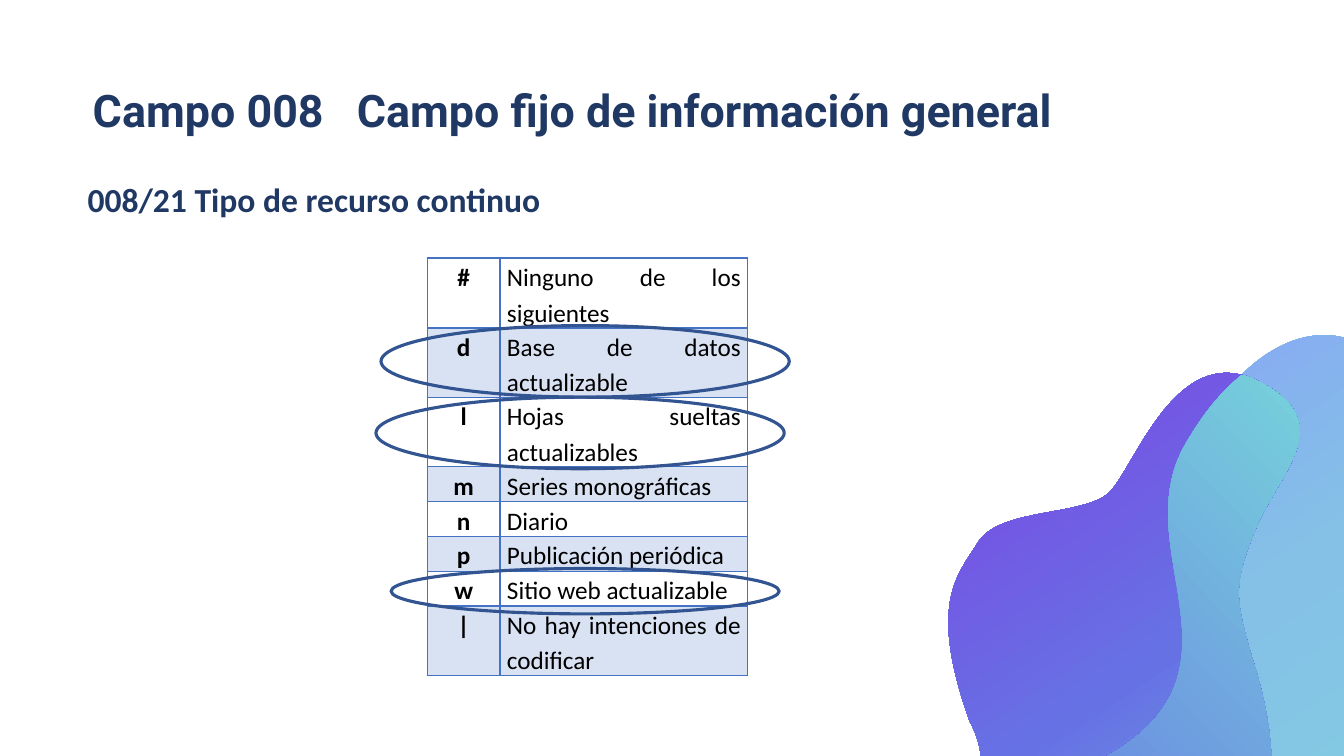
"""Build the slide on field 008/21, type of continuing resource."""
import math
from pptx import Presentation, util as u
from pptx.dml.color import RGBColor
from pptx.enum import shapes, text
from pptx.oxml import parse_xml
from pptx.oxml.ns import nsdecls

THEME = {
    "navy": RGBColor.from_string("203864"), "black": RGBColor.from_string("000000"),
    "ring": RGBColor.from_string("325491"), "table": "4472C4", "band_alpha": 20000,
    "title_font": "Roboto", "body_font": "Calibri",
    "title_size": u.Pt(32), "subtitle_size": u.Pt(24), "cell_size": u.Pt(18),
}
COLS, ROWS = 40 / 3, 7.5
TILT = 52.2


def span(*cells):
    """Turn grid columns or rows into lengths."""
    return [u.Inches(c) for c in cells]


def style(p, font, size, color, bold, align, spacing):
    """Format a whole paragraph."""
    p.font.name, p.font.size, p.font.bold = font, size, bold
    p.font.color.rgb = color
    p.alignment, p.line_spacing = align, spacing


prs = Presentation()
prs.slide_width, prs.slide_height = span(COLS, ROWS)
s = prs.slides.add_slide(prs.slide_layouts[5])

title = s.shapes.title
title.left, title.top, title.width, title.height = span(0.92, 0.4, 11.5, 1.45)
tf = title.text_frame
tf.margin_left = tf.margin_top = tf.margin_right = tf.margin_bottom = 0
tf.vertical_anchor, tf.word_wrap = text.MSO_ANCHOR.MIDDLE, True
tf.auto_size = text.MSO_AUTO_SIZE.NONE
p = tf.paragraphs[0]
p.text = "Campo 008\tCampo fijo de información general"
style(p, THEME["title_font"], THEME["title_size"], THEME["navy"], True, text.PP_ALIGN.LEFT, 0.9)
p._p.get_or_add_pPr().find("{*}defRPr").addprevious(parse_xml(
    f'<a:tabLst {nsdecls("a")}><a:tab pos="{u.Inches(2.62)}" algn="l"/></a:tabLst>'))

blobs = [
    ((9.44, 3.45, 5.02, 6.67), 236, [(0, "80DEDE"), (54, "85C1E7"), (100, "878CFF")], [
        (10.64, 7.59),
        (12.88, 6.72), (11.21, 5.42), (11.9, 4.27),
        (12.58, 3.11), (13.36, 3.25), (13.58, 3.49),
        (13.8, 3.72), (13.84, 3.96), (13.51, 4.35),
        (13.18, 4.73), (13.86, 5.47), (14.32, 5.97),
        (14.78, 6.48), (14.96, 7.62), (13.85, 7.84),
        (12.73, 8.06), (12.79, 8.05), (12.25, 8.95),
        (11.71, 9.84), (11.07, 9.81), (11.07, 9.81),
        (11.07, 9.81), (9.99, 9.69), (9.85, 8.81),
        (9.71, 7.92), (10.64, 7.59), (10.64, 7.59)]),
    ((8.84, 3.68, 5.07, 6.23), 236, [(0, "7CEFD8"), (51, "6672E4"), (100, "882BE5")], [
        (9.4, 8.95),
        (9.4, 8.95), (9.78, 9.82), (11.42, 9.26),
        (13.05, 8.7), (12.6, 7.09), (12.42, 6.52),
        (12.25, 5.94), (12.23, 5.79), (12.46, 5.24),
        (12.69, 4.69), (13.3, 4.19), (12.48, 3.78),
        (11.66, 3.37), (11.25, 4.66), (11, 4.89),
        (10.75, 5.12), (9.93, 5.04), (9.71, 5.37),
        (9.5, 5.71), (9.2, 5.97), (9.62, 7.16),
        (9.62, 7.16), (9.97, 7.7), (9.46, 8.32),
        (9.46, 8.32), (9.19, 8.7), (9.4, 8.95)]),
    ((9.54, 4.02, 4.38, 5.86), 316, [(0, "882BE5"), (19, "6672E4"), (100, "7CEFD8")], [
        (11.42, 9.26),
        (10.68, 9.51), (10.19, 9.47), (9.89, 9.35),
        (9.81, 9.24), (9.75, 9.1), (9.72, 8.93),
        (9.58, 8.04), (10.51, 7.72), (10.51, 7.72),
        (12.75, 6.85), (11.08, 5.54), (11.77, 4.39),
        (11.95, 4.08), (12.14, 3.86), (12.32, 3.72),
        (12.37, 3.73), (12.43, 3.75), (12.48, 3.78),
        (13.3, 4.19), (12.69, 4.69), (12.46, 5.24),
        (12.23, 5.79), (12.25, 5.94), (12.42, 6.52),
        (12.6, 7.09), (13.05, 8.7), (11.42, 9.26)]),
]
cos, sin = math.cos(math.radians(TILT)), math.sin(math.radians(TILT))
for (left, top, width, height), angle, stops, points in blobs:
    local = []
    for x, y in points:
        dx, dy = x - left - width / 2, y - top - height / 2
        local.append(span(width / 2 + dx * cos + dy * sin, height / 2 - dx * sin + dy * cos))
    builder = s.shapes.build_freeform(*local[0])
    builder.add_line_segments(local[3::3], close=True)
    sp = builder.convert_to_shape()
    sp.left, sp.top, sp.width, sp.height = span(left, top, width, height)
    sp.rotation = TILT
    sp.shadow.inherit = False
    sp.line.fill.background()
    geometry = sp._element.spPr.find("{*}custGeom")
    pts = [f'<a:pt x="{x}" y="{y}"/>' for x, y in local]
    curves = "".join(f'<a:cubicBezTo>{"".join(pts[i:i + 3])}</a:cubicBezTo>'
                     for i in range(1, len(pts), 3))
    path_list = geometry.find("{*}pathLst")
    path_list.replace(path_list[0], parse_xml(
        f'<a:path {nsdecls("a")} w="{sp.width}" h="{sp.height}">'
        f'<a:moveTo>{pts[0]}</a:moveTo>{curves}<a:close/></a:path>'))
    gs = "".join(f'<a:gs pos="{pos * 1000}"><a:srgbClr val="{c}"/></a:gs>' for pos, c in stops)
    geometry.addnext(parse_xml(
        f'<a:gradFill {nsdecls("a")} rotWithShape="0"><a:gsLst>{gs}</a:gsLst>'
        f'<a:lin ang="{angle * 60000}" scaled="0"/></a:gradFill>'))

subtitle = s.shapes.add_textbox(*span(0.77, 1.67, 4.73, 0.54))
tf = subtitle.text_frame
tf.word_wrap, tf.auto_size = False, text.MSO_AUTO_SIZE.SHAPE_TO_FIT_TEXT
p = tf.paragraphs[0]
p.text = "008/21 Tipo de recurso continuo"
style(p, THEME["body_font"], THEME["subtitle_size"], THEME["navy"], True,
      text.PP_ALIGN.JUSTIFY, 1.15)

codes = [
    ("#", "Ninguno de los siguientes"),
    ("d", "Base de datos actualizable"),
    ("l", "Hojas sueltas actualizables"),
    ("m", "Series monográficas"),
    ("n", "Diario"),
    ("p", "Publicación periódica"),
    ("w", "Sitio web actualizable"),
    ("|", "No hay intenciones de codificar"),
]
row_height = 0.22
frame = s.shapes.add_table(len(codes), 2, *span(4.24, 2.56, 3.18, row_height * len(codes)))
table = frame.table
table.first_row = table.horz_banding = False
for column, width in zip(table.columns, span(0.72, 2.46)):
    column.width = width
for i, row in enumerate(codes):
    table.rows[i].height = u.Inches(row_height)
    for j, value in enumerate(row):
        cell = table.cell(i, j)
        cell.margin_left, cell.margin_right, cell.margin_top, cell.margin_bottom = span(
            0.07, 0.07, 0, 0)
        p = cell.text_frame.paragraphs[0]
        p.text = value
        style(p, THEME["body_font"], THEME["cell_size"], THEME["black"], j == 0,
              text.PP_ALIGN.JUSTIFY if j else text.PP_ALIGN.CENTER, 1.15)
        tcPr = cell._tc.get_or_add_tcPr()
        if i % 2:
            cell.fill.solid()
            cell.fill.fore_color.rgb = RGBColor.from_string(THEME["table"])
            tcPr.find("{*}solidFill")[0].append(parse_xml(
                f'<a:alpha {nsdecls("a")} val="{THEME["band_alpha"]}"/>'))
        else:
            cell.fill.background()
        for k, side in enumerate("LRTB"):
            width = u.Pt(1.5 if i == 0 and side == "B" else 1)
            tcPr.insert(k, parse_xml(
                f'<a:ln{side} {nsdecls("a")} w="{width}"><a:solidFill>'
                f'<a:srgbClr val="{THEME["table"]}"/></a:solidFill></a:ln{side}>'))

for ring in [(3.78, 3.23, 4.05, 0.71), (3.73, 3.94, 4.05, 0.71), (3.88, 5.64, 3.85, 0.45)]:
    sp = s.shapes.add_shape(shapes.MSO_SHAPE.OVAL, *span(*ring))
    sp.shadow.inherit = False
    sp.fill.background()
    sp.line.color.rgb, sp.line.width = THEME["ring"], u.Pt(2.25)

prs.save("out.pptx")
